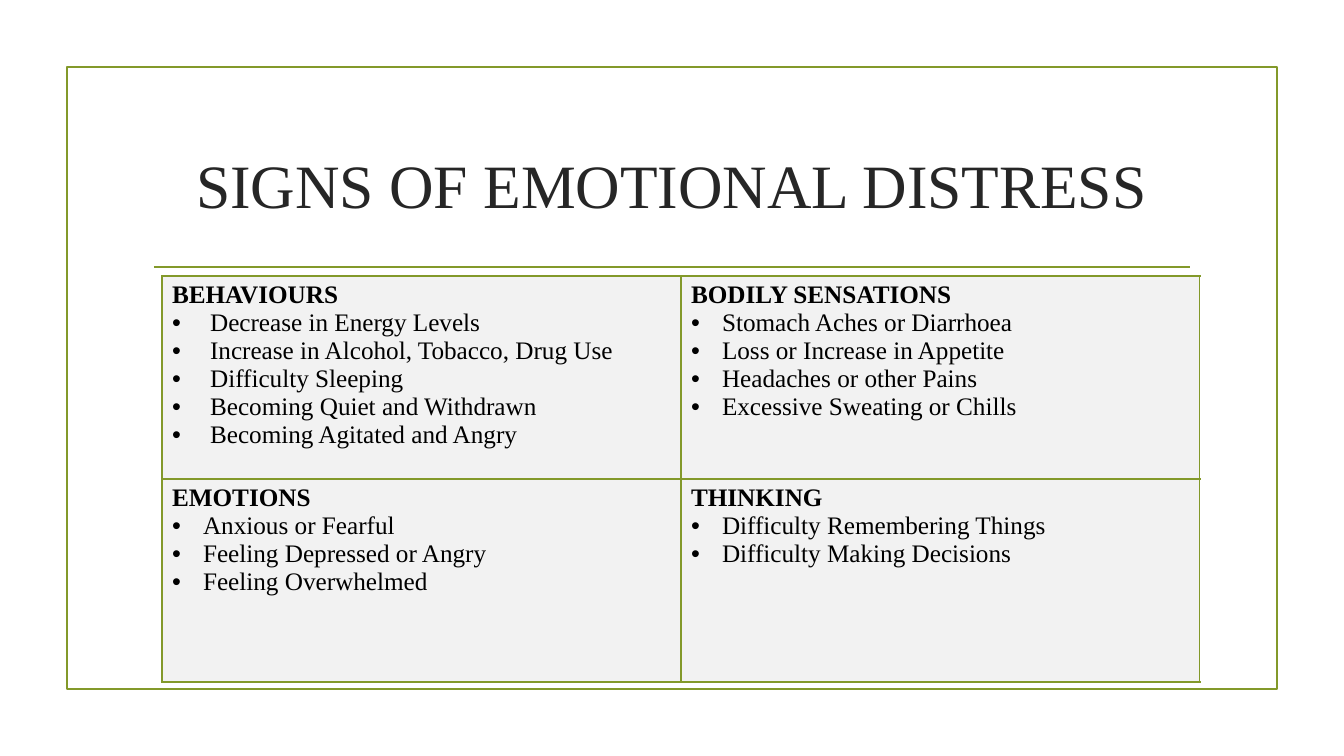
from lxml import etree
from pptx import Presentation
from pptx.dml.color import RGBColor
from pptx.enum.shapes import MSO_CONNECTOR, MSO_SHAPE
from pptx.enum.text import MSO_ANCHOR, PP_ALIGN
from pptx.oxml.ns import qn
from pptx.util import Pt

RECTANGLE = MSO_SHAPE.RECTANGLE
STRAIGHT = MSO_CONNECTOR.STRAIGHT
MIDDLE = MSO_ANCHOR.MIDDLE
CENTER = PP_ALIGN.CENTER

TITLE = "SIGNS OF EMOTIONAL DISTRESS"
# Each sign group: heading, bullet indent in px, signs
SIGN_GROUPS = [
    [
        ("BEHAVIOURS", 38, [
            "Decrease in Energy Levels",
            "Increase in Alcohol, Tobacco, Drug Use",
            "Difficulty Sleeping",
            "Becoming Quiet and Withdrawn",
            "Becoming Agitated and Angry",
        ]),
        ("BODILY SENSATIONS", 31, [
            "Stomach Aches or Diarrhoea",
            "Loss or Increase in Appetite",
            "Headaches or other Pains",
            "Excessive Sweating or Chills",
        ]),
    ],
    [
        ("EMOTIONS", 31, [
            "Anxious or Fearful",
            "Feeling Depressed or Angry",
            "Feeling Overwhelmed",
        ]),
        ("THINKING", 31, [
            "Difficulty Remembering Things",
            "Difficulty Making Decisions",
        ]),
    ],
]

FONT = "Times New Roman"
GREEN = RGBColor(0x83, 0x99, 0x2A)
TITLE_GREY = RGBColor(0x26, 0x26, 0x26)
CELL_GREY = RGBColor(0xF2, 0xF2, 0xF2)
BLACK = RGBColor(0, 0, 0)

SLIDE_SIZE = (1344, 756)
FRAME_BOX = (67, 67, 1210, 622)
TITLE_BOX = (143, 112, 1058, 144)
RULE_ENDS = (154, 267, 1190, 267)
TABLE_BOX = (162, 276, 1038, 406)
PX_PER_INCH = 100.8


def px(length):
    return round(length * 914400 / PX_PER_INCH)


def box(lengths):
    return [px(length) for length in lengths]


def style_text(paragraph, size, color, bold=False):
    for run in paragraph.runs:
        run.font.name = FONT
        run.font.size = Pt(size)
        run.font.color.rgb = color
        run.font.bold = bold


def style_line(line):
    line.color.rgb = GREEN
    line.width = Pt(1.25)


def add_bullet(paragraph, indent):
    properties = paragraph._p.get_or_add_pPr()
    properties.set("marL", str(px(indent)))
    properties.set("indent", str(-px(indent)))
    etree.SubElement(properties, qn("a:buFont"), typeface="Arial")
    etree.SubElement(properties, qn("a:buChar"), char="•")


def add_borders(cell):
    properties = cell._tc.get_or_add_tcPr()
    for side in ("lnL", "lnR", "lnT", "lnB"):
        border = etree.SubElement(properties, qn(f"a:{side}"), w=str(Pt(1)))
        fill = etree.SubElement(border, qn("a:solidFill"))
        etree.SubElement(fill, qn("a:srgbClr"), val=str(GREEN))


def fill_cell(cell, heading, indent, signs):
    add_borders(cell)
    cell.fill.solid()
    cell.fill.fore_color.rgb = CELL_GREY
    cell.text_frame.text = "\n".join([heading, *signs])
    heading_line, *sign_lines = cell.text_frame.paragraphs
    style_text(heading_line, 18, BLACK, bold=True)
    for sign_line in sign_lines:
        add_bullet(sign_line, indent)
        style_text(sign_line, 18, BLACK)


def add_frame(slide):
    frame = slide.shapes.add_shape(RECTANGLE, *box(FRAME_BOX))
    frame.shadow.inherit = False
    frame.fill.background()
    style_line(frame.line)

    rule = slide.shapes.add_connector(STRAIGHT, *box(RULE_ENDS))
    etree.SubElement(rule._element.spPr, qn("a:effectLst"))
    style_line(rule.line)


def add_title(slide):
    title = slide.shapes.title
    title.left, title.top, title.width, title.height = box(TITLE_BOX)
    title.text_frame.text = TITLE
    title.text_frame.vertical_anchor = MIDDLE
    heading = title.text_frame.paragraphs[0]
    heading.alignment = CENTER
    style_text(heading, 44, TITLE_GREY)


def add_sign_table(slide):
    rows, columns = len(SIGN_GROUPS), len(SIGN_GROUPS[0])
    table = slide.shapes.add_table(rows, columns, *box(TABLE_BOX)).table
    table.first_row = False
    table.horz_banding = False
    for row, groups in enumerate(SIGN_GROUPS):
        for column, group in enumerate(groups):
            fill_cell(table.cell(row, column), *group)


def main():
    presentation = Presentation()
    presentation.slide_width, presentation.slide_height = box(SLIDE_SIZE)
    slide = presentation.slides.add_slide(presentation.slide_layouts[5])
    add_frame(slide)
    add_title(slide)
    add_sign_table(slide)
    presentation.save("out.pptx")


if __name__ == "__main__":
    main()
